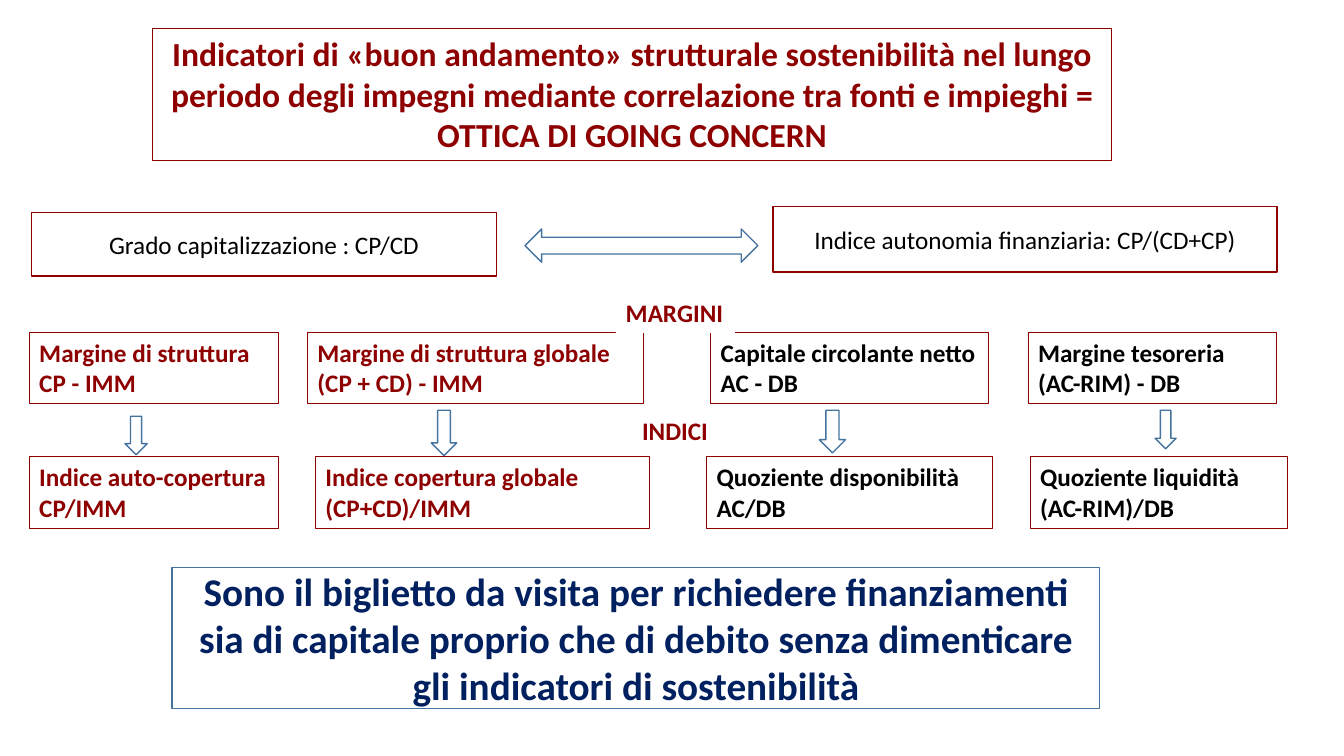
from pptx import Presentation
from pptx.dml.color import RGBColor
from pptx.enum.shapes import MSO_SHAPE
from pptx.enum.text import MSO_ANCHOR, PP_ALIGN
from pptx.util import Cm, Pt

COLORS = {"red": "8E0000", "blue": "43739E", "navy": "002060",
          "black": "000000", "white": "FFFFFF"}

prs = Presentation()
prs.slide_width, prs.slide_height = Cm(33.87), Cm(19.05)
slide = prs.slides.add_slide(prs.slide_layouts[6])


def add_figure(kind, left, top, width, height, line="blue", line_width=1, fill="white"):
    figure = slide.shapes.add_shape(kind, Cm(left), Cm(top), Cm(width), Cm(height))
    figure.shadow.inherit = False
    if fill:
        figure.fill.solid()
        figure.fill.fore_color.rgb = RGBColor.from_string(COLORS[fill])
    else:
        figure.fill.background()
    if line:
        figure.line.color.rgb = RGBColor.from_string(COLORS[line])
        figure.line.width = Pt(line_width)
    else:
        figure.line.fill.background()
    return figure


def write(figure, text, color, size=18, bold=True, align=PP_ALIGN.LEFT,
          anchor=MSO_ANCHOR.TOP, wrap=True):
    frame = figure.text_frame
    frame.text = text
    frame.word_wrap = wrap
    frame.vertical_anchor = anchor
    for paragraph in frame.paragraphs:
        paragraph.alignment = align
        paragraph.font.name = "Calibri"
        paragraph.font.size = Pt(size)
        paragraph.font.bold = bold
        paragraph.font.color.rgb = RGBColor.from_string(COLORS[color])


# Heading
heading = add_figure(MSO_SHAPE.RECTANGLE, 3.84, 0.71, 24.18, 3.33, "red", 0.75, fill=None)
write(heading, "Indicatori di «buon andamento» strutturale sostenibilità nel lungo "
      "periodo degli impegni mediante correlazione tra fonti e impieghi = "
      "OTTICA DI GOING CONCERN", "red", 24, align=PP_ALIGN.CENTER)

# Two equivalent ratios
ratios = [
    ("Grado capitalizzazione : CP/CD", 0.79, 5.36, 11.73, 1.6),
    ("Indice autonomia finanziaria: CP/(CD+CP)", 19.48, 5.21, 12.7, 1.65),
]
for text, *place in ratios:
    ratio = add_figure(MSO_SHAPE.RECTANGLE, *place, line="red")
    write(ratio, text, "black", bold=False, align=PP_ALIGN.CENTER, anchor=MSO_ANCHOR.MIDDLE)
add_figure(MSO_SHAPE.LEFT_RIGHT_ARROW, 13.23, 5.77, 5.87, 0.84)

# Margins and the indices below them: text, left, width
MARGIN_TOP, INDEX_TOP, BOX_HEIGHT = 8.38, 11.51, 1.8
columns = [
    ("red", ("Margine di struttura\nCP - IMM", 0.74, 6.27),
     ("Indice auto-copertura\nCP/IMM", 0.74, 6.27), (3.15, 10.49, 0.56, 0.97)),
    ("red", ("Margine di struttura globale\n(CP + CD) - IMM", 7.75, 8.46),
     ("Indice copertura globale\n(CP+CD)/IMM", 7.95, 8.41), (10.87, 10.34, 0.64, 1.14)),
    ("black", ("Capitale circolante netto\nAC - DB", 17.91, 7.01),
     ("Quoziente disponibilità\nAC/DB", 17.81, 7.21), (20.65, 10.34, 0.66, 1.07)),
    ("black", ("Margine tesoreria\n(AC-RIM) - DB", 25.91, 6.27),
     ("Quoziente liquidità\n(AC-RIM)/DB", 25.96, 6.5), (29.11, 10.34, 0.53, 0.97)),
]
for color, margin, index, arrow in columns:
    for (text, left, width), top in ((margin, MARGIN_TOP), (index, INDEX_TOP)):
        box = add_figure(MSO_SHAPE.RECTANGLE, left, top, width, BOX_HEIGHT, "red", 0.75)
        write(box, text, color)
    add_figure(MSO_SHAPE.DOWN_ARROW, *arrow)

# Row labels
for text, left, top, width in [("MARGINI", 15.52, 7.37, 3), ("INDICI", 15.93, 10.34, 2.18)]:
    label = add_figure(MSO_SHAPE.RECTANGLE, left, top, width, 1.02, line=None)
    write(label, text, "red", wrap=False)

# Conclusion
conclusion = add_figure(MSO_SHAPE.RECTANGLE, 4.34, 14.3, 23.37, 3.56)
write(conclusion, "Sono il biglietto da visita per richiedere finanziamenti sia di "
      "capitale proprio che di debito senza dimenticare gli indicatori di sostenibilità",
      "navy", 28, align=PP_ALIGN.CENTER, anchor=MSO_ANCHOR.MIDDLE)

prs.save("out.pptx")
